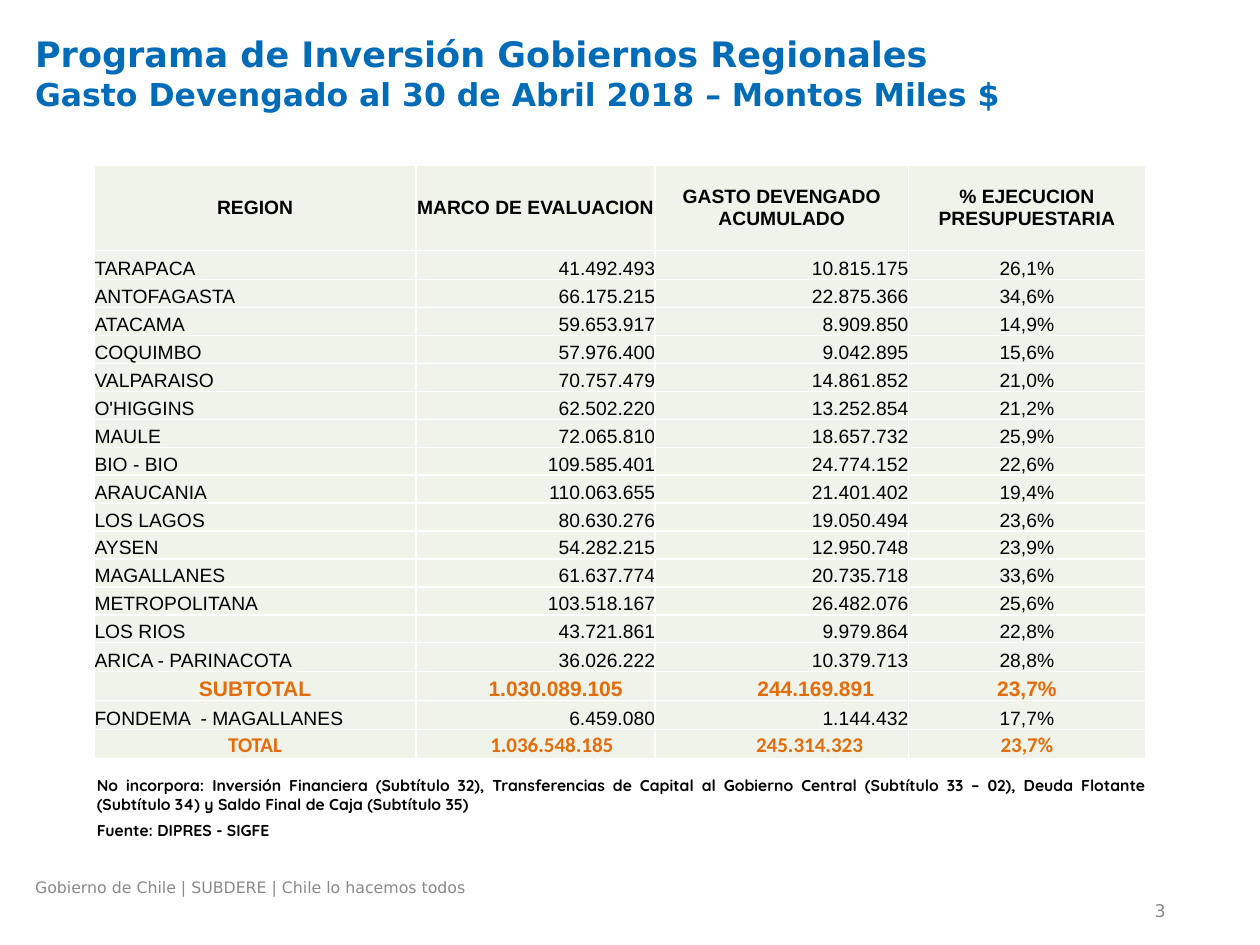
from lxml.etree import SubElement
from pptx import Presentation
from pptx.dml.color import RGBColor
from pptx.enum.text import MSO_ANCHOR, PP_ALIGN
from pptx.oxml.ns import qn
from pptx.util import Inches, Pt

UNIT = 0.1
BLUE, GRAY, BLACK, ORANGE = "006CB7", "898989", "000000", "E46C0A"
WHITE, PALE = "FFFFFF", "EFF3EA"

HEADERS = ["REGION", "MARCO DE EVALUACION", "GASTO DEVENGADO ACUMULADO", "% EJECUCION PRESUPUESTARIA"]
REGIONS = [
    ("TARAPACA", "41.492.493", "10.815.175", "26,1%"),
    ("ANTOFAGASTA", "66.175.215", "22.875.366", "34,6%"),
    ("ATACAMA", "59.653.917", "8.909.850", "14,9%"),
    ("COQUIMBO", "57.976.400", "9.042.895", "15,6%"),
    ("VALPARAISO", "70.757.479", "14.861.852", "21,0%"),
    ("O'HIGGINS", "62.502.220", "13.252.854", "21,2%"),
    ("MAULE", "72.065.810", "18.657.732", "25,9%"),
    ("BIO - BIO", "109.585.401", "24.774.152", "22,6%"),
    ("ARAUCANIA", "110.063.655", "21.401.402", "19,4%"),
    ("LOS LAGOS", "80.630.276", "19.050.494", "23,6%"),
    ("AYSEN", "54.282.215", "12.950.748", "23,9%"),
    ("MAGALLANES", "61.637.774", "20.735.718", "33,6%"),
    ("METROPOLITANA", "103.518.167", "26.482.076", "25,6%"),
    ("LOS RIOS", "43.721.861", "9.979.864", "22,8%"),
    ("ARICA - PARINACOTA", "36.026.222", "10.379.713", "28,8%"),
]
SUBTOTAL = ("SUBTOTAL", "1.030.089.105", "244.169.891", "23,7%")
FONDEMA = ("FONDEMA  - MAGALLANES", "6.459.080", "1.144.432", "17,7%")
TOTAL = ("TOTAL", "1.036.548.185", "245.314.323", "23,7%")

CENTERED = [PP_ALIGN.CENTER] * 4
BY_COLUMN = [PP_ALIGN.LEFT, PP_ALIGN.RIGHT, PP_ALIGN.RIGHT, PP_ALIGN.CENTER]
HEADER_FONT = {"name": "Arial", "size": Pt(11), "bold": True, "color": BLACK}
BODY_FONT = HEADER_FONT | {"bold": False}
SUBTOTAL_FONT = HEADER_FONT | {"size": Pt(12), "color": ORANGE}
TOTAL_FONT = SUBTOTAL_FONT | {"name": "Calibri"}


def color(value):
    return RGBColor.from_string(value)


def grid(*cells):
    return [Inches(cell * UNIT) for cell in cells]


def set_font(font, values):
    for name, value in values.items():
        if name == "color":
            font.color.rgb = color(value)
        else:
            setattr(font, name, value)


class SlideBuilder:
    def __init__(self, presentation):
        self.slide = presentation.slides.add_slide(presentation.slide_layouts[6])
        self.font = {"name": "DejaVu Sans", "bold": False, "color": GRAY}

    def text(self, box, paragraphs, align=PP_ALIGN.LEFT, anchor=MSO_ANCHOR.TOP, space=0):
        frame = self.slide.shapes.add_textbox(*grid(*box)).text_frame
        frame.word_wrap = True
        frame.vertical_anchor = anchor
        for index, lines in enumerate(paragraphs):
            paragraph = frame.add_paragraph() if index else frame.paragraphs[0]
            paragraph.alignment = align
            if index:
                paragraph.space_before = Pt(space)
            for number, (content, values) in enumerate(lines):
                if number:
                    paragraph.add_line_break()
                run = paragraph.add_run()
                run.text = content
                set_font(run.font, self.font | values)

    def table(self, left, top, widths, heights, rows):
        box = grid(left, top, sum(widths), sum(heights))
        table = self.slide.shapes.add_table(len(rows), len(widths), *box).table
        table.first_row = table.horz_banding = False
        for column, width in zip(table.columns, grid(*widths)):
            column.width = width
        for row, height, (values, font, aligns, anchor, indents) in zip(table.rows, grid(*heights), rows):
            row.height = height
            for cell, value, align, indent in zip(row.cells, values, aligns, indents):
                self.cell(cell, value, font, align, anchor, indent)

    def cell(self, cell, value, font, align, anchor, indent):
        layout = {
            "margin_left": Inches(indent),
            "margin_right": 0,
            "margin_top": 0,
            "margin_bottom": 0,
            "vertical_anchor": anchor,
        }
        for name, setting in layout.items():
            setattr(cell, name, setting)
        paragraph = cell.text_frame.paragraphs[0]
        paragraph.alignment = align
        run = paragraph.add_run()
        run.text = value
        set_font(run.font, font)
        properties = cell._tc.get_or_add_tcPr()
        for side in ("lnL", "lnR", "lnT", "lnB"):
            line = SubElement(properties, qn(f"a:{side}"), w=str(Pt(1)))
            fill = SubElement(line, qn("a:solidFill"))
            SubElement(fill, qn("a:srgbClr"), val=WHITE)
        cell.fill.solid()
        cell.fill.fore_color.rgb = color(PALE)


def main():
    presentation = Presentation()
    presentation.slide_width, presentation.slide_height = grid(100, 75)
    builder = SlideBuilder(presentation)

    title = {"bold": True, "color": BLUE}
    builder.text((1.8, 2.1, 96.2, 9.4), [[
        ("Programa de Inversión Gobiernos Regionales", title | {"size": Pt(20)}),
        ("Gasto Devengado al 30 de Abril 2018 – Montos Miles $", title | {"size": Pt(18)}),
    ]])

    flush = [0] * 4
    body = (BODY_FONT, BY_COLUMN, MSO_ANCHOR.BOTTOM, flush)
    rows = [
        (HEADERS, HEADER_FONT, CENTERED, MSO_ANCHOR.MIDDLE, flush),
        *[(region, *body) for region in REGIONS],
        (SUBTOTAL, SUBTOTAL_FONT, CENTERED, MSO_ANCHOR.BOTTOM, [0, 0.32, 0.54, 0]),
        (FONDEMA, *body),
        (TOTAL, TOTAL_FONT, CENTERED, MSO_ANCHOR.BOTTOM, [0, 0.26, 0.44, 0]),
    ]
    heights = [6.8, 2.3] + [2.22] * 13 + [2.3] * 4
    builder.table(7.5, 13.1, [25.5, 19, 20.1, 18.8], heights, rows)

    note = {"name": "Quicksand", "size": Pt(9), "bold": True, "color": BLACK}
    builder.text((6.7, 61.1, 85.1, 6.3), [
        [("No incorpora: Inversión Financiera (Subtítulo 32), Transferencias de Capital al Gobierno Central "
          "(Subtítulo 33 – 02), Deuda Flotante (Subtítulo 34) y Saldo Final de Caja (Subtítulo 35)", note)],
        [("Fuente: DIPRES - SIGFE", note)],
    ], align=PP_ALIGN.JUSTIFY, space=4)

    builder.text((1.8, 69.2, 64.8, 2.7), [[("Gobierno de Chile | SUBDERE | Chile lo hacemos todos", {"size": Pt(9)})]])
    builder.text((70.2, 71.2, 23.3, 2.1), [[("3", {"size": Pt(10)})]],
                 align=PP_ALIGN.RIGHT, anchor=MSO_ANCHOR.MIDDLE)

    presentation.save("out.pptx")


if __name__ == "__main__":
    main()
